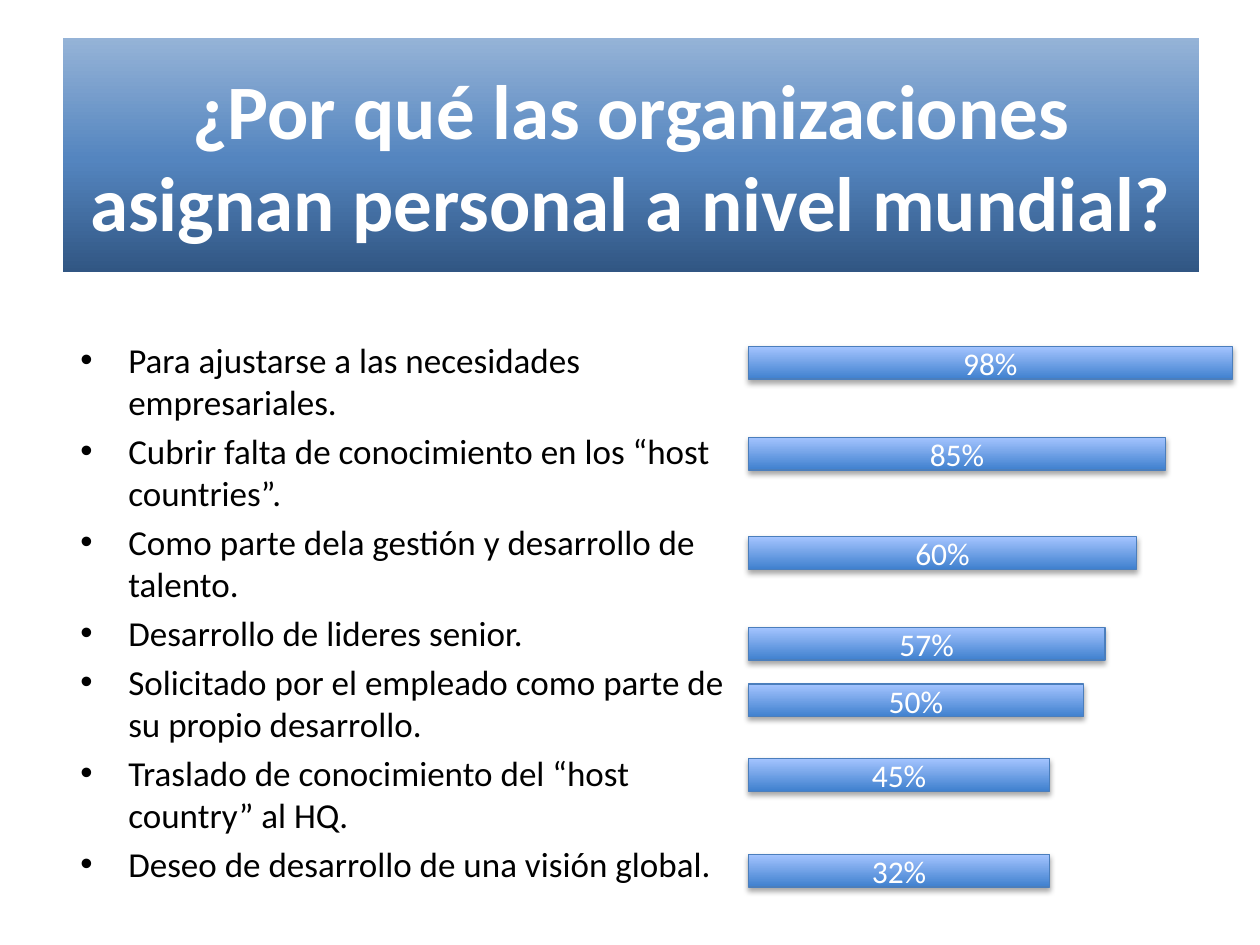
import copy
from dataclasses import dataclass

import lxml.etree
import pptx
import pptx.dml.color
import pptx.enum.shapes
import pptx.enum.text
import pptx.oxml.ns
import pptx.util

qn = pptx.oxml.ns.qn
Inches = pptx.util.Inches
Pt = pptx.util.Pt
RGB = pptx.dml.color.RGBColor.from_string
ALIGN = pptx.enum.text.PP_ALIGN
ANCHOR = pptx.enum.text.MSO_ANCHOR


@dataclass(frozen=True)
class Theme:
    font: str = "Calibri"
    light: str = "FFFFFF"
    dark: str = "000000"
    bar_line: str = "4B7EBC"
    title_stops: tuple = ((0, "315683"), (48, "5485BF"), (100, "95B3D7"))
    bar_stops: tuple = ((0, "3F80CE"), (100, "A4C4FF"))
    title_size: int = 44
    body_size: int = 20
    bar_size: int = 18


THEME = Theme()

TITLE = "¿Por qué las organizaciones asignan personal a nivel mundial?"
REASONS = [
    "Para ajustarse a las necesidades empresariales.",
    "Cubrir falta de conocimiento en los “host countries”.",
    "Como parte dela gestión y desarrollo de talento.",
    "Desarrollo de lideres senior.",
    "Solicitado por el empleado como parte de su propio desarrollo.",
    "Traslado de conocimiento del “host country” al HQ.",
    "Deseo de desarrollo de una visión global.",
]
# label, offset from the top of the bar region, bar length (inches)
BARS = [
    ("98%", 0, 3.84),
    ("85%", 0.72, 3.31),
    ("60%", 1.51, 3.08),
    ("57%", 2.23, 2.83),
    ("50%", 2.68, 2.66),
    ("45%", 3.27, 2.39),
    ("32%", 4.03, 2.39),
]
BAR_HEIGHT = 0.26


def add_run(p, text, size, color, bold=False):
    r = p.add_run()
    r.text = text
    for name, value in {"name": THEME.font, "size": Pt(size), "bold": bold}.items():
        setattr(r.font, name, value)
    r.font.color.rgb = RGB(color)


def fill_upward(sp, stops):
    """Fill with a gradient that runs from the bottom edge to the top."""
    sp.fill.gradient()
    sp.fill.gradient_angle = 90
    stop_list = next(sp._element.spPr.iter(qn("a:gsLst")))
    while len(stop_list) < len(stops):
        stop_list.append(copy.deepcopy(stop_list[0]))
    for stop, (position, color) in zip(sp.fill.gradient_stops, stops):
        stop.position = position / 100
        stop.color.rgb = RGB(color)


def add_shadow(sp):
    """Cast a soft black shadow straight down."""
    effects = sp._element.spPr.find(qn("a:effectLst"))
    shadow = lxml.etree.SubElement(
        effects, qn("a:outerShdw"), blurRad=str(Pt(3.1)), dist=str(Pt(1.8)),
        dir="5400000", rotWithShape="0")
    color = lxml.etree.SubElement(shadow, qn("a:srgbClr"), val="000000")
    lxml.etree.SubElement(color, qn("a:alpha"), val="35000")


def add_panel(s, box, stops, text, size, bold=False):
    """Add a gradient rectangle with centred light text."""
    sp = s.shapes.add_shape(pptx.enum.shapes.MSO_SHAPE.RECTANGLE, *map(Inches, box))
    sp.shadow.inherit = False
    fill_upward(sp, stops)
    sp.line.fill.background()
    tf = sp.text_frame
    for name, value in {"word_wrap": True, "vertical_anchor": ANCHOR.MIDDLE}.items():
        setattr(tf, name, value)
    p = tf.paragraphs[0]
    p.alignment = ALIGN.CENTER
    add_run(p, text, size, THEME.light, bold)
    return sp


def add_title(s, box):
    add_panel(s, box, THEME.title_stops, TITLE, THEME.title_size, bold=True)


def set_bullet(p, indent):
    """Give a hanging bullet and a space before of 20% of the line."""
    pPr = p._p.get_or_add_pPr()
    pPr.set("marL", str(Inches(indent)))
    pPr.set("indent", str(-Inches(indent)))
    before = lxml.etree.SubElement(pPr, qn("a:spcBef"))
    lxml.etree.SubElement(before, qn("a:spcPct"), val="20000")
    lxml.etree.SubElement(pPr, qn("a:buFont"), typeface="Arial")
    lxml.etree.SubElement(pPr, qn("a:buChar"), char="•")


def add_reasons(s, box):
    tf = s.shapes.add_textbox(*map(Inches, box)).text_frame
    tf.word_wrap = True
    for i, reason in enumerate(REASONS):
        p = tf.add_paragraph() if i else tf.paragraphs[0]
        set_bullet(p, 0.38)
        add_run(p, reason, THEME.body_size, THEME.dark)


def add_bars(s, left, top):
    for label, offset, length in BARS:
        sp = add_panel(s, (left, top + offset, length, BAR_HEIGHT),
                       THEME.bar_stops, label, THEME.bar_size)
        sp.line.color.rgb = RGB(THEME.bar_line)
        sp.line.width = Pt(0.75)
        add_shadow(sp)


def main():
    prs = pptx.Presentation()
    prs.slide_width, prs.slide_height = Inches(10), Inches(7.5)
    s = prs.slides.add_slide(prs.slide_layouts[6])
    add_title(s, (0.5, 0.3, 9.02, 1.86))
    add_reasons(s, (0.54, 2.64, 5.4, 4.43))
    add_bars(s, 5.94, 2.75)
    prs.save("out.pptx")


if __name__ == "__main__":
    main()
